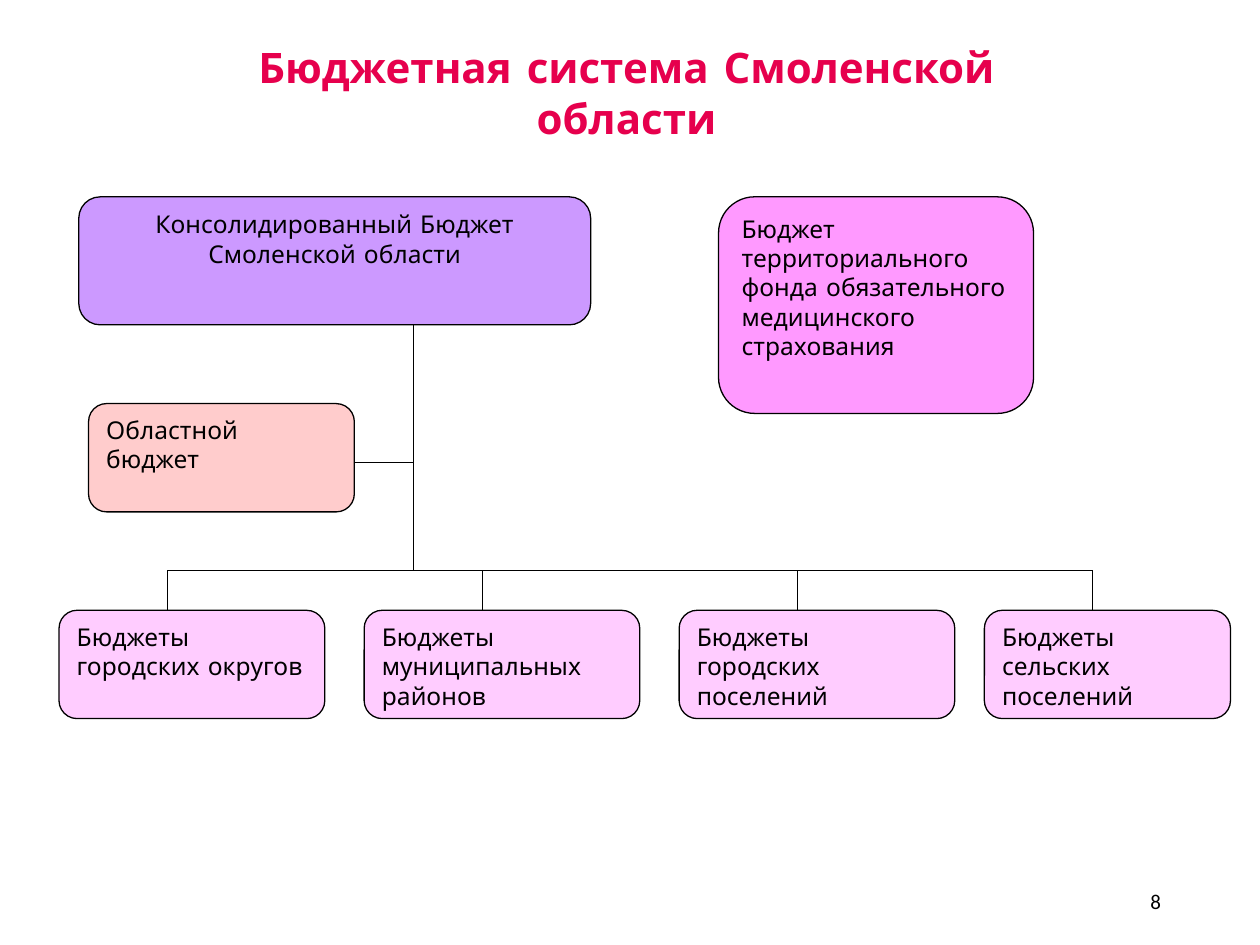
from dataclasses import dataclass

from lxml import etree
from pptx import Presentation
from pptx.dml.color import RGBColor
from pptx.enum.shapes import MSO_CONNECTOR, MSO_SHAPE
from pptx.enum.text import MSO_ANCHOR, PP_ALIGN
from pptx.oxml.ns import qn
from pptx.util import Pt

ROUNDED = MSO_SHAPE.FLOWCHART_ALTERNATE_PROCESS
STRAIGHT = MSO_CONNECTOR.STRAIGHT
LEFT, CENTER, RIGHT = PP_ALIGN.LEFT, PP_ALIGN.CENTER, PP_ALIGN.RIGHT
TOP, MIDDLE = MSO_ANCHOR.TOP, MSO_ANCHOR.MIDDLE

COLORS = {
    "title": "E6004D",
    "black": "000000",
    "consolidated": "CC99FF",
    "fund": "FF99FF",
    "regional": "FFCCCC",
    "local": "FFCCFF",
}
HEAD_FONT = "Comic Neue"
NUMBER_FONT = "Calibri"

# Heights of the tree's levels and position of its trunk
TOP_Y = 112.5
TRUNK_X = 236.25
REGIONAL_Y = 264.38
BUS_Y = 326.25
LOCAL_Y = 348.75
BOX_H = 61.88


@dataclass
class Box:
    text: str
    x: float
    y: float
    w: float
    h: float
    fill: str
    align: PP_ALIGN = LEFT


@dataclass
class LocalBudget:
    text: str
    x: float
    w: float
    drop_x: float


TOP_BOXES = [
    Box("Консолидированный Бюджет Смоленской области",
        45, TOP_Y, 292.5, 73.12, "consolidated", CENTER),
    Box("Бюджет территориального фонда обязательного медицинского страхования",
        410.62, TOP_Y, 180, 123.75, "fund"),
    Box("Областной бюджет", 50.62, 230.62, 151.88, BOX_H, "regional"),
]
LOCAL_BUDGETS = [
    LocalBudget("Бюджеты городских округов", 33.75, 151.88, 95.62),
    LocalBudget("Бюджеты муниципальных районов", 208.12, 157.5, 275.62),
    LocalBudget("Бюджеты городских поселений", 388.12, 157.5, 455.62),
    LocalBudget("Бюджеты сельских поселений", 562.5, 140.62, 624.38),
]


def rgb(name: str) -> RGBColor:
    return RGBColor.from_string(COLORS[name])


def write(sp, text: str, size: float, align: PP_ALIGN, font: str = HEAD_FONT,
          color: str = "black", bold: bool = False, anchor: MSO_ANCHOR = TOP) -> None:
    tf = sp.text_frame
    tf.word_wrap = True
    tf.vertical_anchor = anchor
    p = tf.paragraphs[0]
    p.alignment = align
    r = p.add_run()
    r.text = text
    r.font.name = font
    r.font.size = Pt(size)
    r.font.bold = bold
    r.font.color.rgb = rgb(color)


def add_box(s, box: Box) -> None:
    sp = s.shapes.add_shape(ROUNDED, Pt(box.x), Pt(box.y), Pt(box.w), Pt(box.h))
    sp.shadow.inherit = False
    sp.fill.solid()
    sp.fill.fore_color.rgb = rgb(box.fill)
    sp.line.color.rgb = rgb("black")
    sp.line.width = Pt(0.75)
    write(sp, box.text, 14, box.align)


def add_line(s, x1: float, y1: float, x2: float, y2: float, width: float = 0.5) -> None:
    line = s.shapes.add_connector(STRAIGHT, Pt(x1), Pt(y1), Pt(x2), Pt(y2))
    line.line.color.rgb = rgb("black")
    line.line.width = Pt(width)
    etree.SubElement(line._element.spPr, qn("a:effectLst"))


def main() -> None:
    prs = Presentation()
    prs.slide_width, prs.slide_height = Pt(720), Pt(540)
    s = prs.slides.add_slide(prs.slide_layouts[6])

    # Title
    sp = s.shapes.add_textbox(Pt(121.75), Pt(20.25), Pt(472.5), Pt(33.75))
    write(sp, "Бюджетная система Смоленской области", 24, CENTER,
          color="title", bold=True)

    # Budgets
    for box in TOP_BOXES:
        add_box(s, box)
    for b in LOCAL_BUDGETS:
        add_box(s, Box(b.text, b.x, LOCAL_Y, b.w, BOX_H, "local"))

    # Trunk, regional branch, bus and drops to the local budgets
    consolidated, _, regional = TOP_BOXES
    add_line(s, TRUNK_X, consolidated.y + consolidated.h, TRUNK_X, BUS_Y, 0.75)
    add_line(s, regional.x + regional.w, REGIONAL_Y, TRUNK_X, REGIONAL_Y)
    add_line(s, LOCAL_BUDGETS[0].drop_x, BUS_Y, LOCAL_BUDGETS[-1].drop_x, BUS_Y)
    for b in LOCAL_BUDGETS:
        add_line(s, b.drop_x, BUS_Y, b.drop_x, LOCAL_Y)

    # Slide number
    sp = s.shapes.add_textbox(Pt(508.5), Pt(500.5), Pt(162), Pt(28.75))
    write(sp, "8", 12, RIGHT, font=NUMBER_FONT, anchor=MIDDLE)

    prs.save("out.pptx")


if __name__ == "__main__":
    main()
